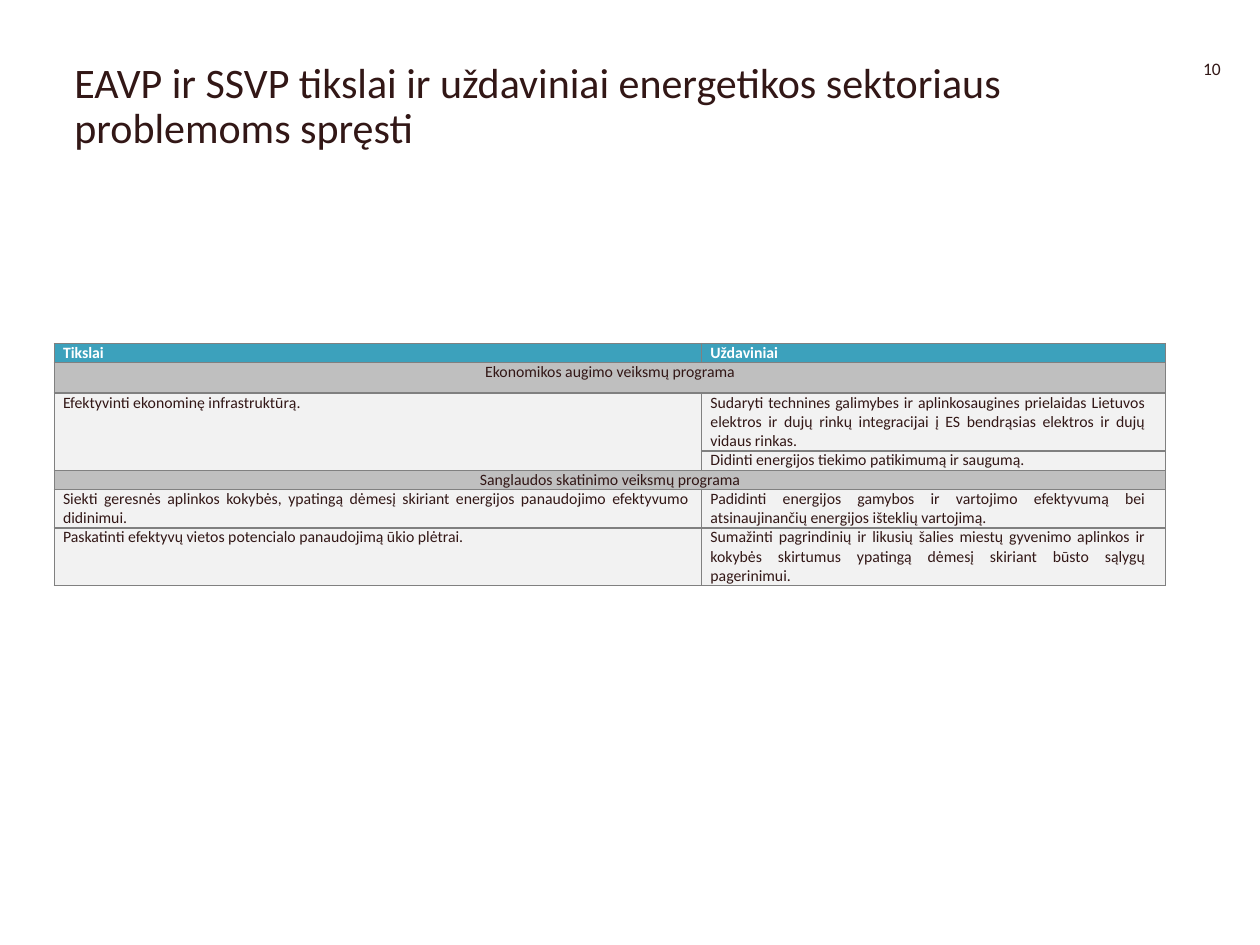
"""Build the slide on energy sector goals and objectives."""
from lxml.etree import SubElement
from pptx import Presentation
from pptx.dml.color import RGBColor
from pptx.enum.text import MSO_ANCHOR, MSO_AUTO_SIZE, PP_ALIGN
from pptx.oxml.ns import qn
from pptx.util import Pt

COLORS = {
    "text": "321716",
    "white": "FFFFFF",
    "header": "3CA1BC",
    "program": "BFBFBF",
    "body": "F2F2F2",
    "border": "808080",
}
FONT_NAME = "Calibri"
TITLE = "EAVP ir SSVP tikslai ir uždaviniai energetikos sektoriaus problemoms spręsti"
ROWS = [
    ("header", "Tikslai", "Uždaviniai"),
    ("program", "Ekonomikos augimo veiksmų programa", None),
    ("body", "Efektyvinti ekonominę infrastruktūrą.",
     "Sudaryti technines galimybes ir aplinkosaugines prielaidas Lietuvos elektros ir dujų "
     "rinkų integracijai į ES bendrąsias elektros ir dujų vidaus rinkas."),
    ("body", None, "Didinti energijos tiekimo patikimumą ir saugumą."),
    ("program", "Sanglaudos skatinimo veiksmų programa", None),
    ("body", "Siekti geresnės aplinkos kokybės, ypatingą dėmesį skiriant energijos "
     "panaudojimo efektyvumo didinimui.",
     "Padidinti energijos gamybos ir vartojimo efektyvumą bei atsinaujinančių energijos "
     "išteklių vartojimą."),
    ("body", "Paskatinti efektyvų vietos potencialo panaudojimą ūkio plėtrai.",
     "Sumažinti pagrindinių ir likusių šalies miestų gyvenimo aplinkos ir kokybės skirtumus "
     "ypatingą dėmesį skiriant būsto sąlygų pagerinimui."),
]
COLUMN_WIDTHS = [370, 265]
ROW_HEIGHTS = [10.8, 17.5, 33, 11.2, 10.8, 22, 33]
RIGHT_MARGINS = [8, 12]


def format_text(paragraph, size, color="text", bold=False):
    """Apply the shared font to every run of a paragraph."""
    for run in paragraph.runs:
        run.font.name = FONT_NAME
        run.font.size = Pt(size)
        run.font.bold = bold
        run.font.color.rgb = RGBColor.from_string(COLORS[color])


def add_title(slide):
    """Place and format the title placeholder."""
    title = slide.shapes.title
    title.left, title.top, title.width, title.height = Pt(35.3), Pt(31.7), Pt(635), Pt(85)
    frame = title.text_frame
    frame.text = TITLE
    frame.auto_size = MSO_AUTO_SIZE.NONE
    frame.vertical_anchor = MSO_ANCHOR.TOP
    paragraph = frame.paragraphs[0]
    paragraph.alignment = PP_ALIGN.LEFT
    paragraph.line_spacing = 0.9
    format_text(paragraph, 24)


def add_page_number(slide):
    """Add the page number at the top right."""
    box = slide.shapes.add_textbox(Pt(680.4), Pt(29.5), Pt(26.6), Pt(19.4))
    frame = box.text_frame
    frame.word_wrap = False
    frame.auto_size = MSO_AUTO_SIZE.SHAPE_TO_FIT_TEXT
    frame.text = "10"
    format_text(frame.paragraphs[0], 10)


def style_cell(cell, kind, right_margin):
    """Set the fill, margins and thin border of a cell."""
    cell.margin_left, cell.margin_right = Pt(5), Pt(right_margin)
    cell.margin_top = cell.margin_bottom = 0
    properties = cell._tc.get_or_add_tcPr()
    for side in ("a:lnL", "a:lnR", "a:lnT", "a:lnB"):
        line = SubElement(properties, qn(side), w=str(Pt(1)))
        fill = SubElement(line, qn("a:solidFill"))
        SubElement(fill, qn("a:srgbClr"), val=COLORS["border"])
    cell.fill.solid()
    cell.fill.fore_color.rgb = RGBColor.from_string(COLORS[kind])


def write_cell(cell, kind, text):
    """Write and format the text of a cell."""
    cell.text_frame.text = text
    paragraph = cell.text_frame.paragraphs[0]
    paragraph.alignment = PP_ALIGN.CENTER if kind == "program" else PP_ALIGN.JUSTIFY
    is_header = kind == "header"
    format_text(paragraph, 9, "white" if is_header else "text", is_header)


def add_goals_table(slide):
    """Add the table of goals and objectives by program."""
    frame = slide.shapes.add_table(
        len(ROWS), len(COLUMN_WIDTHS), Pt(31), Pt(196.3),
        Pt(sum(COLUMN_WIDTHS)), Pt(sum(ROW_HEIGHTS)))
    table = frame.table
    for column, width in zip(table.columns, COLUMN_WIDTHS):
        column.width = Pt(width)
    for row, height in zip(table.rows, ROW_HEIGHTS):
        row.height = Pt(height)
    for row_index, (kind, *texts) in enumerate(ROWS):
        for column_index, text in enumerate(texts):
            cell = table.cell(row_index, column_index)
            margin = 5 if kind == "program" else RIGHT_MARGINS[column_index]
            style_cell(cell, kind, margin)
            write_cell(cell, kind, text or "")
            cell.text_frame.paragraphs[0].font.size = Pt(9)
        if kind == "program":
            table.cell(row_index, 0).merge(table.cell(row_index, 1))
    table.cell(2, 0).merge(table.cell(3, 0))


def main():
    """Create and save the presentation."""
    presentation = Presentation()
    presentation.slide_width, presentation.slide_height = Pt(720), Pt(540)
    slide = presentation.slides.add_slide(presentation.slide_layouts[5])
    add_page_number(slide)
    add_title(slide)
    add_goals_table(slide)
    presentation.save("out.pptx")


if __name__ == "__main__":
    main()
